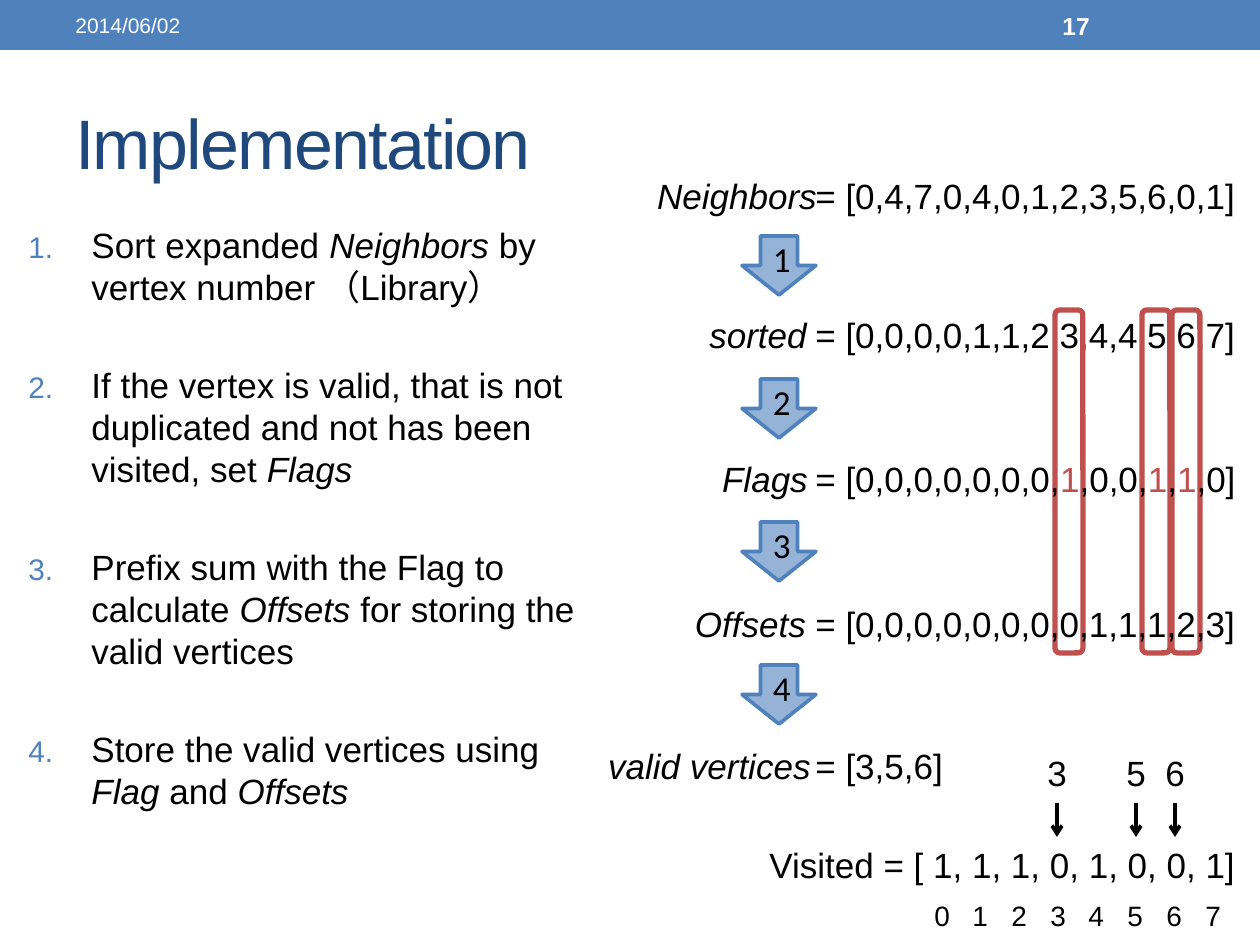
from collections import namedtuple
from dataclasses import dataclass

from lxml.etree import SubElement
from pptx import Presentation
from pptx.dml.color import RGBColor
from pptx.enum.shapes import MSO_CONNECTOR as Connector, MSO_SHAPE as Preset
from pptx.enum.text import MSO_ANCHOR as Anchor, PP_ALIGN as Align
from pptx.oxml.ns import qn
from pptx.util import Emu, Pt

Box = namedtuple("Box", "left top width height")
Run = namedtuple("Run", "text italic color", defaults=(False, None))


@dataclass(frozen=True)
class Theme:
    blue: str = "4F81BD"
    pale_blue: str = "95B3D7"
    navy: str = "1F497D"
    red: str = "C0504D"
    black: str = "000000"
    white: str = "FFFFFF"
    font: str = "Arial"
    digit_font: str = "Calibri"
    title: int = 40
    body: int = 20
    index: int = 16
    number: int = 14
    date: int = 12
    thin: float = 2.08
    thick: float = 3


THEME = Theme()


def px(length):
    return Emu(round(length * 914400 / 126))


def rgb(color):
    return RGBColor.from_string(color)


def inside(box, left, top, width, height):
    return Box(box.left + left, box.top + top, width, height)


def add_runs(paragraph, runs, size=THEME.body, color=THEME.black, font=THEME.font, bold=False):
    for text, italic, run_color in runs:
        run = paragraph.add_run()
        run.text = text
        run.font.name, run.font.size = font, Pt(size)
        run.font.italic, run.font.bold = italic, bold
        run.font.color.rgb = rgb(run_color or color)


def add_frame(slide, box, anchor=Anchor.TOP):
    frame = slide.shapes.add_textbox(*map(px, box)).text_frame
    frame.word_wrap = True
    frame.vertical_anchor = anchor
    return frame


def add_text(slide, box, runs, anchor=Anchor.TOP, align=Align.LEFT, **style):
    paragraph = add_frame(slide, box, anchor).paragraphs[0]
    paragraph.alignment = align
    add_runs(paragraph, runs, **style)
    return paragraph


def add_preset(slide, preset, box, fill=None, line=None, weight=0):
    shape = slide.shapes.add_shape(preset, *map(px, box))
    shape.shadow.inherit = False
    if fill:
        shape.fill.solid()
        shape.fill.fore_color.rgb = rgb(fill)
    else:
        shape.fill.background()
    if line:
        shape.line.color.rgb = rgb(line)
        shape.line.width = Pt(weight)
    else:
        shape.line.fill.background()
    return shape


def add_arrow(slide, x, top, bottom):
    arrow = slide.shapes.add_connector(Connector.STRAIGHT, px(x), px(top), px(x), px(bottom))
    arrow.line.color.rgb = rgb(THEME.black)
    arrow.line.width = Pt(THEME.thin)
    SubElement(arrow.line._get_or_add_ln(), qn("a:tailEnd"), type="arrow")
    SubElement(arrow._element.spPr, qn("a:effectLst"))


def build_header(slide, box):
    add_preset(slide, Preset.RECTANGLE, box, fill=THEME.blue)
    add_text(slide, inside(box, 63, 3, 399, 45), [Run("2014/06/02")], Anchor.MIDDLE,
             size=THEME.date, color=THEME.white)
    add_text(slide, inside(box, 1050, 3, 147, 45), [Run("17")], Anchor.MIDDLE,
             size=THEME.number, color=THEME.white, bold=True)


def build_title(slide, box):
    paragraph = add_text(slide, box, [Run("Implementation")], Anchor.MIDDLE,
                         size=THEME.title, color=THEME.navy)
    paragraph.runs[0].font._element.set("spc", "-100")


def build_steps(slide, box):
    steps = [
        [Run("Sort expanded "), Run("Neighbors ", True), Run("by vertex number （Library）")],
        [Run("If the vertex is valid, that is not duplicated and not has been visited, set "),
         Run("Flags", True)],
        [Run("Prefix sum with the Flag to calculate "), Run("Offsets", True),
         Run(" for storing the valid vertices")],
        [Run("Store the valid vertices using "), Run("Flag", True), Run(" and "),
         Run("Offsets", True)],
    ]
    frame = add_frame(slide, box)
    for number, runs in enumerate(steps, 1):
        paragraph = frame.paragraphs[0] if number == 1 else frame.add_paragraph()
        paragraph.line_spacing = Pt(24)
        paragraph.space_before = Pt(0 if number == 1 else 32)
        # Numbering
        properties = paragraph._p.get_or_add_pPr()
        properties.set("marL", str(px(63)))
        properties.set("indent", str(-px(63)))
        SubElement(SubElement(properties, qn("a:buClr")), qn("a:srgbClr"), val=THEME.blue)
        SubElement(properties, qn("a:buSzPct"), val="85000")
        SubElement(properties, qn("a:buFont"), typeface=THEME.font)
        SubElement(properties, qn("a:buAutoNum"), type="arabicPeriod", startAt=str(number))
        add_runs(paragraph, runs)


def build_array(slide, box, name, name_left, name_width, values):
    add_text(slide, inside(box, name_left, 0, name_width, 55), [Run(name, True)], align=Align.CENTER)
    add_text(slide, inside(box, 213, 0, 459, 55), values)


def build_trace(slide, box):
    one = Run("1", color=THEME.red)
    flags = [Run("= [0,0,0,0,0,0,0,"), one, Run(",0,0,"), one, Run(","), one, Run(",0]")]
    arrays = [
        (0, "Neighbors", 49, 196, [Run("= [0,4,7,0,4,0,1,2,3,5,6,0,1]")]),
        (139, "sorted", 102, 132, [Run("= [0,0,0,0,1,1,2,3,4,4,5,6,7]")]),
        (283, "Flags", 114, 122, flags),
        (428, "Offsets", 87, 147, [Run("= [0,0,0,0,0,0,0,0,1,1,1,2,3]")]),
        (570, "valid vertices", 0, 239, [Run("= [3,5,6]")]),
    ]
    for row, (top, *array) in enumerate(arrays):
        # Marked columns lie over the sorted row and under the later ones
        if row == 2:
            for left in (465, 552, 582):
                add_preset(slide, Preset.ROUNDED_RECTANGLE, inside(box, left, 142, 28, 343),
                           line=THEME.red, weight=THEME.thick)
        build_array(slide, inside(box, 0, top, 672, 55), *array)

    # Numbered step arrows
    for step in range(4):
        arrow = add_preset(slide, Preset.DOWN_ARROW, inside(box, 152, 68 + 143 * step, 74, 59),
                           THEME.pale_blue, THEME.blue, THEME.thin)
        arrow.text_frame.vertical_anchor = Anchor.MIDDLE
        paragraph = arrow.text_frame.paragraphs[0]
        paragraph.alignment = Align.CENTER
        add_runs(paragraph, [Run(str(step + 1))], font=THEME.digit_font)


def build_visited(slide, box):
    add_text(slide, inside(box, 0, 92, 502, 55), [Run("Visited = [ 1, 1, 1, 0, 1, 0, 0, 1]")])

    # Vertices pointing at their entries
    for vertex, x in (("3", 300), ("5", 379), ("6", 418)):
        add_arrow(slide, box.left + x, box.top + 58, box.top + 92)
        add_text(slide, inside(box, x - 22, 0, 45, 55), [Run(vertex)])

    # Index line on even tab stops
    indices = add_text(slide, inside(box, 165, 147, 316, 47),
                       [Run("\t".join(map(str, range(8))))], size=THEME.index)
    tabs = SubElement(indices._p.get_or_add_pPr(), qn("a:tabLst"))
    for stop in range(1, 8):
        SubElement(tabs, qn("a:tab"), pos=str(px(271 * stop // 7)), algn="l")


def main():
    presentation = Presentation()
    presentation.slide_width, presentation.slide_height = px(1260), px(945)
    slide = presentation.slides.add_slide(presentation.slide_layouts[6])
    build_header(slide, Box(0, 0, 1260, 50))
    build_title(slide, Box(63, 73, 1134, 136))
    build_steps(slide, Box(16, 217, 601, 658))
    build_trace(slide, Box(590, 168, 672, 625))
    build_visited(slide, Box(757, 745, 502, 194))
    presentation.save("out.pptx")


if __name__ == "__main__":
    main()
